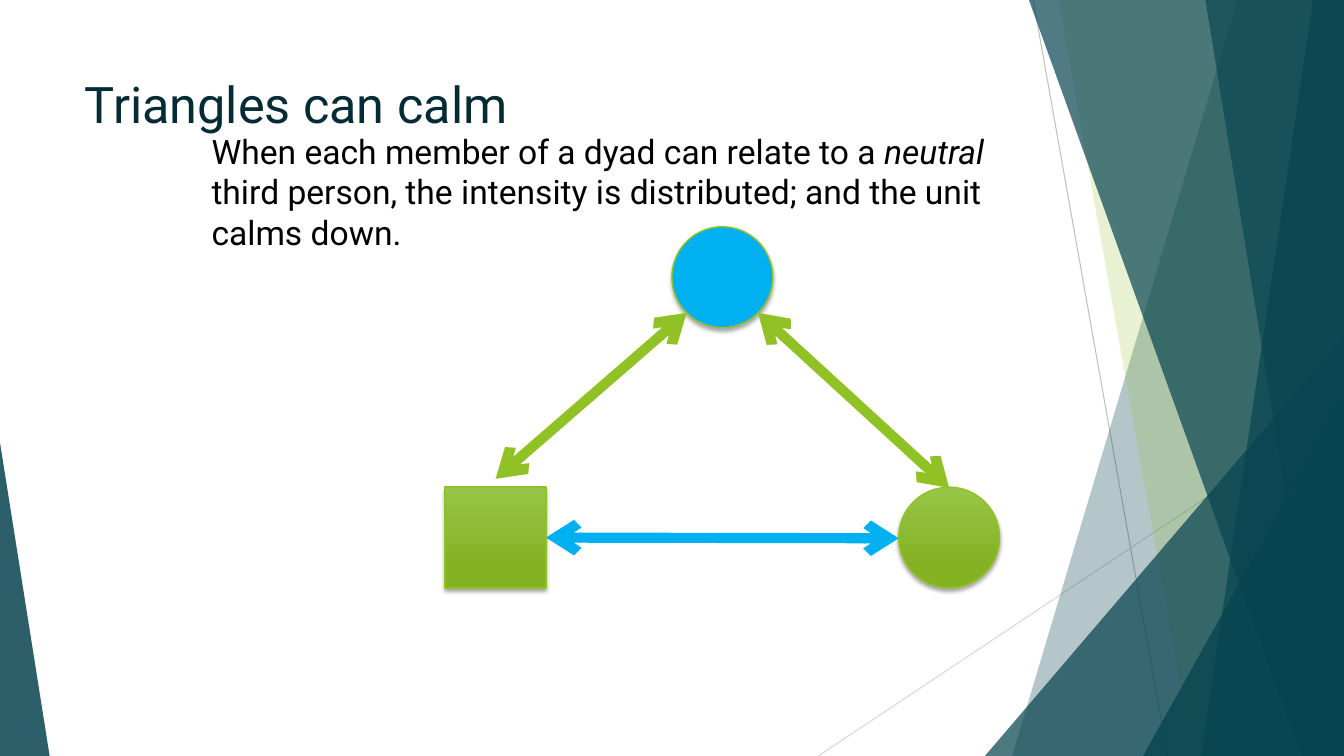
from lxml.etree import SubElement
from pptx import Presentation
from pptx.dml.color import RGBColor
from pptx.enum.shapes import MSO_CONNECTOR, MSO_SHAPE
from pptx.enum.text import MSO_ANCHOR
from pptx.oxml.ns import qn
from pptx.util import Pt

LINE = MSO_CONNECTOR.STRAIGHT
OVAL = MSO_SHAPE.OVAL
RECT = MSO_SHAPE.RECTANGLE
WEDGE = MSO_SHAPE.ISOSCELES_TRIANGLE
TOP = MSO_ANCHOR.TOP

TEAL = RGBColor(0x08, 0x44, 0x50)
INK = RGBColor(0x05, 0x2C, 0x34)
BLACK = RGBColor(0, 0, 0)
GREEN = RGBColor(0x90, 0xC2, 0x26)
LIGHT = RGBColor(0x97, 0xC5, 0x47)
DARK = RGBColor(0x84, 0xB2, 0x23)
BLUE = RGBColor(0x00, 0xB0, 0xF0)
GREY = RGBColor(0xBF, 0xBF, 0xBF)
PALE = RGBColor(0xD9, 0xD9, 0xD9)

WIDE, HIGH = 960, 540
SIDE = 72  # width and height of each person


class Board:
    def __init__(self, slide, font):
        self.shapes = slide.shapes
        self.font = font

    def text(self, box, *runs, size, color):
        """Each run is a pair: words, italic."""
        frame = self.shapes.add_textbox(*map(Pt, box)).text_frame
        frame.word_wrap = True
        frame.vertical_anchor = TOP
        for words, slant in runs:
            run = frame.paragraphs[0].add_run()
            run.text = words
            run.font.name = self.font
            run.font.size = Pt(size)
            run.font.italic = slant
            run.font.color.rgb = color

    def line(self, start, end, color, width, arrows=False):
        link = self.shapes.add_connector(LINE, *map(Pt, start + end))
        link.line.color.rgb = color
        link.line.width = Pt(width)
        if arrows:
            ln = link.line._get_or_add_ln()
            for tip in ("a:headEnd", "a:tailEnd"):
                SubElement(ln, qn(tip), type="arrow")
        SubElement(link.element.spPr, qn("a:effectLst"))
        return link

    def glass(self, shape, color, alpha):
        """Give a shape a see-through fill and no outline."""
        shape.shadow.inherit = False
        shape.line.fill.background()
        shape.fill.solid()
        shape.fill.fore_color.rgb = color
        tint = shape.element.spPr.find(qn("a:solidFill"))[0]
        SubElement(tint, qn("a:alpha"), val=str(alpha * 1000))

    def band(self, top, foot, color, alpha):
        """Fill from a slanted left edge to the right edge of the slide."""
        form = self.shapes.build_freeform(Pt(top), 0)
        form.add_line_segments([(Pt(x), Pt(y)) for x, y in
                                ((WIDE, 0), (WIDE, HIGH), (foot, HIGH))])
        self.glass(form.convert_to_shape(), color, alpha)

    def wedge(self, left, top, width, peak, alpha):
        """Triangle that stands on the bottom of the slide."""
        shape = self.shapes.add_shape(
            WEDGE, Pt(left), Pt(top), Pt(width), Pt(HIGH - top))
        shape.adjustments[0] = peak
        self.glass(shape, TEAL, alpha)

    def person(self, kind, left, top, color=None):
        """Without a color the fill is a green gradient."""
        shape = self.shapes.add_shape(
            kind, Pt(left), Pt(top), Pt(SIDE), Pt(SIDE))
        if color:
            shape.fill.solid()
            shape.fill.fore_color.rgb = color
        else:
            shape.fill.gradient()
            shape.fill.gradient_angle = 270
            for stop, tone, place in zip(
                    shape.fill.gradient_stops, (LIGHT, DARK), (0, 0.78)):
                stop.color.rgb = tone
                stop.position = place
        shape.line.color.rgb = GREEN
        shape.line.width = Pt(1)
        shape.shadow.inherit = False
        glow = SubElement(
            shape.element.spPr.find(qn("a:effectLst")), qn("a:outerShdw"),
            blurRad=str(Pt(3)), dist=str(Pt(2)), dir="5400000",
            rotWithShape="0")
        tint = SubElement(glow, qn("a:srgbClr"), val=str(BLACK))
        SubElement(tint, qn("a:alpha"), val="35000")
        return shape


def main():
    deck = Presentation()
    deck.slide_width, deck.slide_height = Pt(WIDE), Pt(HIGH)
    board = Board(deck.slides.add_slide(deck.slide_layouts[6]), "Roboto")

    board.line((738, 0), (834, HIGH), GREY, 0.75)
    board.line((WIDE, 290), (584.5, HIGH), PALE, 0.75)
    board.band(884, 723, TEAL, 30)
    board.band(756, 852, GREEN, 20)
    board.wedge(703.5, 240, 256.5, 1, 72)
    board.band(735, 929.5, TEAL, 70)
    board.band(938, 858, TEAL, 70)
    board.band(861, 949, TEAL, 65)
    board.wedge(816.5, 283, 143.5, 1, 80)
    board.wedge(0, 316, 35.5, 0, 85)

    board.text((53.5, 48.5, 677, 103.5), ("Triangles can calm", False),
               size=36, color=INK)

    board.person(OVAL, 480, 162, BLUE)
    board.person(OVAL, 642, 348)
    square = board.person(RECT, 318, 348)
    calm = board.line((390, 384), (642, 384.5), BLUE, 7.25, arrows=True)
    calm.begin_connect(square, 3)
    board.line((541.5, 223.5), (678, 348.5), GREEN, 7.25, arrows=True)
    board.line((354, 342), (490.5, 223.5), GREEN, 7.25, arrows=True)

    board.text((144, 90, 586, 94.5),
               ("When each member of a dyad can relate to a ", False),
               ("neutral", True),
               (" third person, the intensity is distributed; "
                "and the unit calms down.", False),
               size=24, color=BLACK)
    deck.save("out.pptx")


if __name__ == "__main__":
    main()
